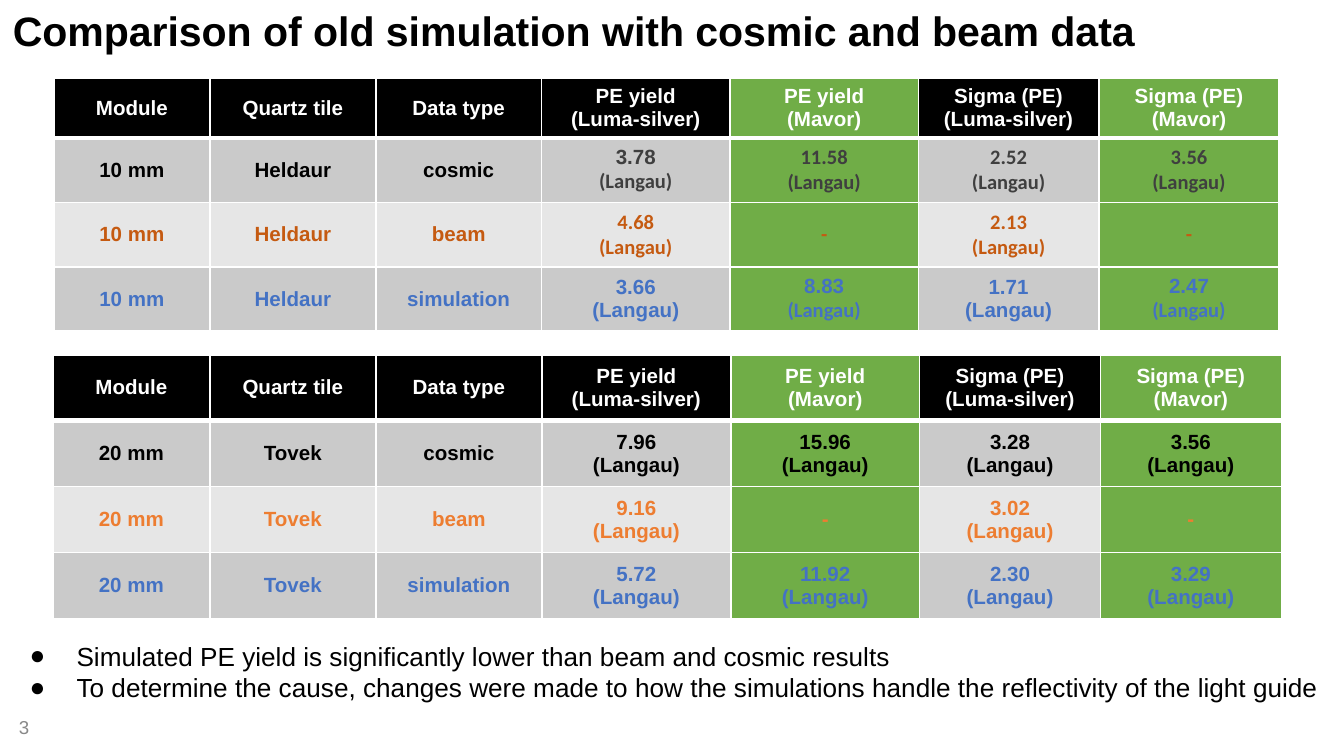
from itertools import product
from lxml.etree import SubElement
from pptx import Presentation
from pptx.dml.color import RGBColor
from pptx.enum.text import MSO_ANCHOR, MSO_AUTO_SIZE, PP_ALIGN
from pptx.oxml import parse_xml
from pptx.oxml.ns import nsdecls, qn
from pptx.util import Inches, Pt

WIDE = Inches(10)
HIGH = WIDE * 9 // 16
BLACK = RGBColor(0x00, 0x00, 0x00)
WHITE = RGBColor(0xFF, 0xFF, 0xFF)
GREEN = RGBColor(0x70, 0xAD, 0x47)
DARK = RGBColor(0xCA, 0xCA, 0xCA)
LIGHT = RGBColor(0xE6, 0xE6, 0xE6)
SLATE = RGBColor(0x3F, 0x3F, 0x3F)
RUST = RGBColor(0xC5, 0x5A, 0x11)
ORANGE = RGBColor(0xED, 0x7D, 0x31)
BLUE = RGBColor(0x44, 0x72, 0xC4)
GRAY = RGBColor(0x88, 0x88, 0x88)

FONTS = {"A": "Arial", "C": "Calibri"}
COLS = (1.17, 1.24, 1.24, 1.41, 1.41, 1.35, 1.35)
HEAD = ["Module", "Quartz tile", "Data type"] + [
    f"{name}\n({foil})"
    for name, foil in product(("PE yield", "Sigma (PE)"), ("Luma-silver", "Mavor"))
]
TYPES = ("cosmic", "beam", "simulation")
FILLS = (BLACK, DARK, LIGHT, DARK)
TABLES = (
    dict(
        box=(4, 10.31, 91.2, 33.2), rows=(0.43, 0.48, 0.48, 0.48),
        label=("10 mm", "Heldaur"),
        data=(("3.78", "11.58", "2.52", "3.56"),
              ("4.68", "-", "2.13", "-"),
              ("3.66", "8.83", "1.71", "2.47")),
        faces=(("AC", "CC", "CC", "CC"), ("CC",) * 4, ("AA", "AC", "AA", "AC")),
        inks=((BLACK, SLATE), (RUST, RUST), (BLUE, BLUE)),
    ),
    dict(
        box=(3.95, 46.93, 91.4, 34.9), rows=(1, 1, 1, 1),
        label=("20 mm", "Tovek"),
        data=(("7.96", "15.96", "3.28", "3.56"),
              ("9.16", "-", "3.02", "-"),
              ("5.72", "11.92", "2.30", "3.29")),
        faces=(("AA",) * 4,) * 3,
        inks=((BLACK, BLACK), (ORANGE, ORANGE), (BLUE, BLUE)),
    ),
)
NOTES = (
    "Simulated PE yield is significantly lower than beam and cosmic results",
    "To determine the cause, changes were made to how the simulations handle "
    "the reflectivity of the light guide",
)


def scale(box):
    left, top, width, height = box
    return [round(part * full / 100) for part, full in
            ((left, WIDE), (top, HIGH), (width, WIDE), (height, HIGH))]


def apply(item, values):
    for key, value in values.items():
        setattr(item, key, value)


def write(frame, lines, size, color, bold=False, faces="AA", align=None):
    for place, line in enumerate(lines):
        para = frame.paragraphs[0] if place == 0 else frame.add_paragraph()
        if align is not None:
            para.alignment = align
        run = para.add_run()
        run.text = line
        apply(run.font, dict(name=FONTS[faces[place]], size=Pt(size), bold=bold))
        run.font.color.rgb = color


def add_text(slide, box, lines, size, color, bold=False, align=None, **form):
    frame = slide.shapes.add_textbox(*scale(box)).text_frame
    apply(frame, dict(
        word_wrap=True, margin_left=Inches(0.07), margin_right=Inches(0.07),
        margin_top=Inches(0.04), margin_bottom=Inches(0.04)) | form)
    write(frame, lines, size, color, bold, align=align)
    return frame


def add_edges(cell, base):
    props = cell._tc.get_or_add_tcPr()
    for place, (side, width) in enumerate((("L", 1), ("R", 1), ("T", 1), ("B", base))):
        props.insert(place, parse_xml(
            f'<a:ln{side} {nsdecls("a")} w="{int(Pt(width))}"><a:solidFill>'
            f'<a:srgbClr val="{WHITE}"/></a:solidFill></a:ln{side}>'))


def add_cell(cell, text, fill, color, faces, base):
    apply(cell, dict(
        vertical_anchor=MSO_ANCHOR.MIDDLE,
        margin_left=Inches(0.08), margin_right=Inches(0.08),
        margin_top=Inches(0.04), margin_bottom=Inches(0.04)))
    cell.fill.solid()
    cell.fill.fore_color.rgb = fill
    add_edges(cell, base)
    write(cell.text_frame, text.split("\n"), 11, color, True, faces, PP_ALIGN.CENTER)


def add_grid(slide, box, rows, label, data, faces, inks):
    left, top, width, height = scale(box)
    grid = slide.shapes.add_table(len(rows), len(COLS), left, top, width, height).table
    for col, share in zip(grid.columns, COLS):
        col.width = round(width * share / sum(COLS))
    for row, share in zip(grid.rows, rows):
        row.height = round(height * share / sum(rows))
    texts = [HEAD] + [
        [*label, kind] + [num if num == "-" else f"{num}\n(Langau)" for num in nums]
        for kind, nums in zip(TYPES, data)
    ]
    looks = [("AA",) * 4, *faces]
    tints = [(WHITE, WHITE), *inks]
    for r, c in product(range(len(rows)), range(len(COLS))):
        add_cell(
            grid.cell(r, c), texts[r][c],
            GREEN if c in (4, 6) else FILLS[r],
            tints[r][c > 2], looks[r][c - 3] if c > 2 else "AA",
            3 if r == 0 else 1)


def add_title(slide, box):
    add_text(slide, box, ["Comparison of old simulation with cosmic and beam data"],
             22, BLACK, True, auto_size=MSO_AUTO_SIZE.SHAPE_TO_FIT_TEXT)


def add_notes(slide, box):
    frame = add_text(slide, box, NOTES, 14, BLACK,
                     auto_size=MSO_AUTO_SIZE.SHAPE_TO_FIT_TEXT)
    for para in frame.paragraphs:
        props = para._p.get_or_add_pPr()
        props.set("marL", str(int(Inches(0.5))))
        props.set("indent", str(int(Inches(-0.35))))
        tint = SubElement(props, qn("a:buClr"))
        SubElement(tint, qn("a:srgbClr"), val=str(BLACK))
        SubElement(props, qn("a:buFont"), typeface="Arial")
        SubElement(props, qn("a:buChar"), char="●")


def add_number(slide, box):
    add_text(slide, box, ["3"], 10, GRAY, align=PP_ALIGN.CENTER,
             vertical_anchor=MSO_ANCHOR.MIDDLE)


def main():
    deck = Presentation()
    apply(deck, dict(slide_width=WIDE, slide_height=HIGH))
    slide = deck.slides.add_slide(deck.slide_layouts[6])
    add_title(slide, (0.25, 0, 87, 8))
    for table in TABLES:
        add_grid(slide, **table)
    add_notes(slide, (0, 83.95, 100, 13.87))
    add_number(slide, (0, 92.3, 3.6, 7.65))
    deck.save("out.pptx")


if __name__ == "__main__":
    main()
